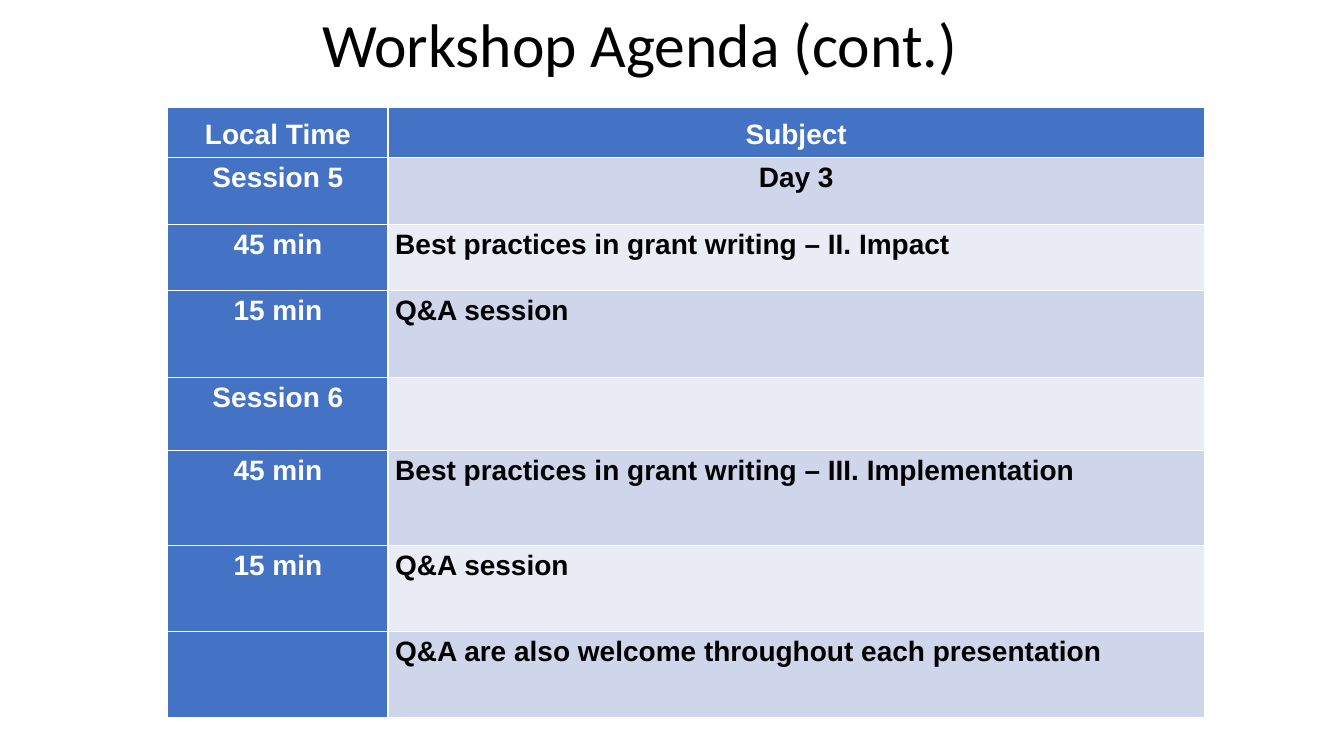
from dataclasses import dataclass

from lxml.etree import SubElement
from pptx import Presentation
from pptx.dml.color import RGBColor
from pptx.enum.text import MSO_ANCHOR as Anchor, PP_ALIGN as Align
from pptx.oxml.ns import qn
from pptx.util import Cm, Pt


@dataclass(frozen=True)
class Theme:
    black: str = "000000"
    white: str = "FFFFFF"
    accent: str = "4472C4"
    bands: tuple = ("CFD5EA", "E9EBF5")
    title_font: str = "Calibri"
    table_font: str = "Arial"
    title_size: int = 44
    table_size: int = 20
    border_width: int = 1


THEME = Theme()

HEADINGS = ("Local Time", "Subject")
SESSIONS = (
    ("Session 5", "Day 3"),
    ("45 min", "Best practices in grant writing – II. Impact"),
    ("15 min", "Q&A session"),
    ("Session 6", ""),
    ("45 min", "Best practices in grant writing – III. Implementation"),
    ("15 min", "Q&A session"),
    ("", "Q&A are also welcome throughout each presentation"),
)
CENTRED_SUBJECTS = ("Subject", "Day 3")
COLUMN_WIDTHS = (5.55, 20.57)
ROW_HEIGHTS = (1.26, 1.68, 1.68, 2.18, 1.84, 2.4, 2.16, 2.16)


def apply(target, values):
    """Set each named attribute of target."""
    for name, value in values.items():
        setattr(target, name, value)


def write(frame, text, color, font, paragraph):
    para = frame.paragraphs[0]
    apply(para, paragraph)
    if text:
        span = para.add_run()
        span.text = text
        apply(span.font, font)
        span.font.color.rgb = RGBColor.from_string(color)


def add_title(page, text):
    box = page.shapes.add_textbox(Cm(5.28), Cm(0.1), Cm(21.69), Cm(2.21))
    apply(box.text_frame, {"word_wrap": True, "vertical_anchor": Anchor.MIDDLE})
    write(box.text_frame, text, THEME.black,
          {"name": THEME.title_font, "size": Pt(THEME.title_size)},
          {"alignment": Align.CENTER, "line_spacing": 0.9})


def add_borders(cell):
    """Draw all four cell edges; they must come before the fill in the XML."""
    properties = cell._tc.get_or_add_tcPr()
    for side in ("lnL", "lnR", "lnT", "lnB"):
        line = SubElement(properties, qn(f"a:{side}"),
                          w=str(Pt(THEME.border_width)))
        fill = SubElement(line, qn("a:solidFill"))
        SubElement(fill, qn("a:srgbClr"), val=THEME.white)


def fill_cell(cell, text, fill, color, alignment, anchor):
    add_borders(cell)
    cell.fill.solid()
    cell.fill.fore_color.rgb = RGBColor.from_string(fill)
    apply(cell, {"margin_left": Cm(0.18), "margin_right": Cm(0.18),
                 "margin_top": 0, "margin_bottom": 0,
                 "vertical_anchor": anchor})
    write(cell.text_frame, text, color,
          {"name": THEME.table_font, "size": Pt(THEME.table_size), "bold": True},
          {"alignment": alignment, "line_spacing": 1.15, "space_after": Pt(10)})


def add_agenda(page):
    rows = (HEADINGS, *SESSIONS)
    table = page.shapes.add_table(
        len(rows), len(HEADINGS), Cm(4.23), Cm(2.71),
        Cm(sum(COLUMN_WIDTHS)), Cm(sum(ROW_HEIGHTS))).table
    for column, width in zip(table.columns, COLUMN_WIDTHS):
        column.width = Cm(width)
    for row, height in zip(table.rows, ROW_HEIGHTS):
        row.height = Cm(height)

    for r, texts in enumerate(rows):
        for c, text in enumerate(texts):
            heading = r == 0 or c == 0
            centred = c == 0 or text in CENTRED_SUBJECTS
            fill_cell(table.cell(r, c), text,
                      THEME.accent if heading else THEME.bands[(r - 1) % 2],
                      THEME.white if heading else THEME.black,
                      Align.CENTER if centred else Align.LEFT,
                      Anchor.MIDDLE if r == 0 else Anchor.TOP)


def main():
    deck = Presentation()
    apply(deck, {"slide_width": Cm(33.87), "slide_height": Cm(19.05)})
    page = deck.slides.add_slide(deck.slide_layouts[6])
    add_title(page, "Workshop Agenda (cont.)")
    add_agenda(page)
    deck.save("out.pptx")


if __name__ == "__main__":
    main()
